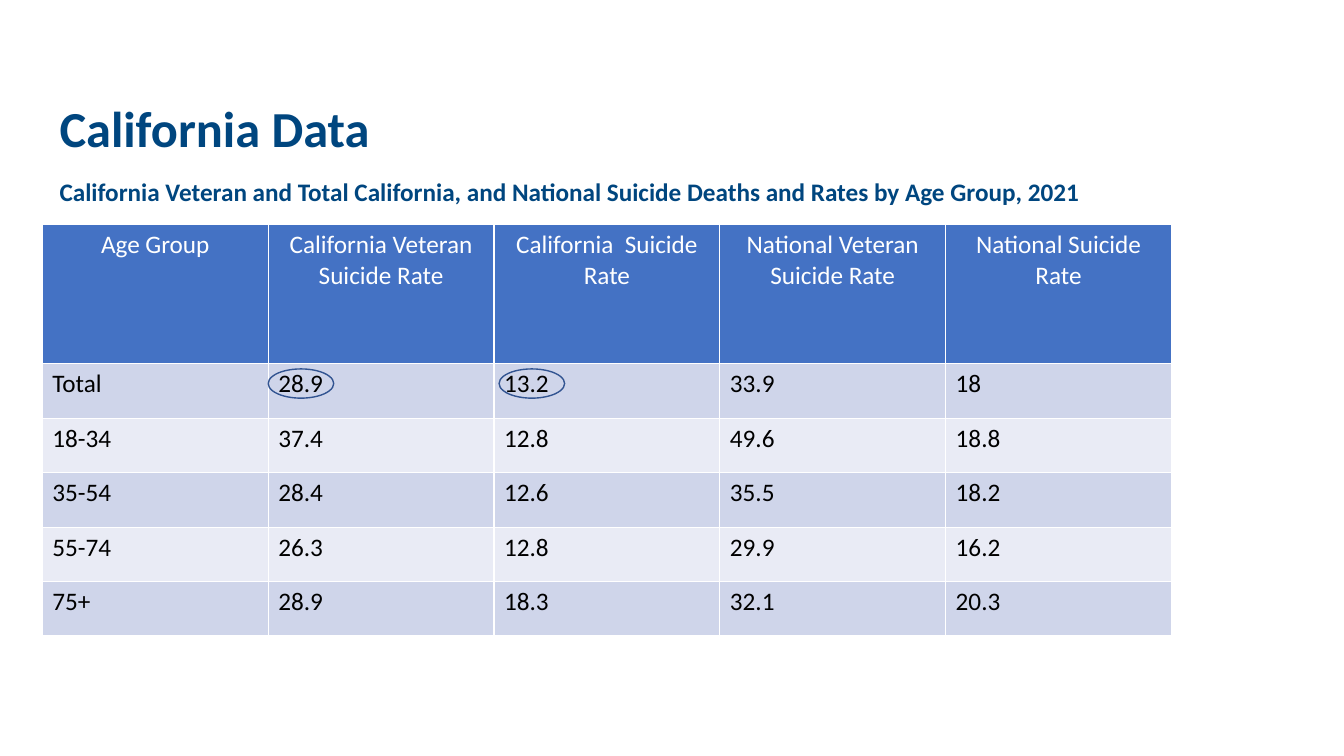
from pptx import Presentation
from pptx import util as u
from pptx.dml.color import RGBColor
from pptx.enum import shapes, text

NAVY = RGBColor(0x00, 0x46, 0x7F)
HEADER_BLUE = RGBColor(0x44, 0x72, 0xC4)
BAND_DARK = RGBColor(0xCF, 0xD5, 0xEA)
BAND_LIGHT = RGBColor(0xE9, 0xEB, 0xF5)
RING_BLUE = RGBColor(0x32, 0x54, 0x91)
WHITE = RGBColor(0xFF, 0xFF, 0xFF)
BLACK = RGBColor(0x00, 0x00, 0x00)

SLIDE_WIDTH, SLIDE_HEIGHT = u.Inches(13.33), u.Inches(7.5)
TABLE_LEFT, TABLE_TOP = u.Inches(0.42), u.Inches(2.23)
COLUMN, ROW, HEADER_ROW = u.Inches(2.24), u.Inches(0.54), u.Inches(1.38)

HEADINGS = [
    ("California Data", 36, 0),
    ("California Veteran and Total California, and National Suicide Deaths "
     "and Rates by Age Group, 2021", 18, 15),
]
RATES = [
    ("Age Group", "California Veteran Suicide Rate", "California  Suicide Rate",
     "National Veteran Suicide Rate", "National Suicide Rate"),
    ("Total", "28.9", "13.2", "33.9", "18"),
    ("18-34", "37.4", "12.8", "49.6", "18.8"),
    ("35-54", "28.4", "12.6", "35.5", "18.2"),
    ("55-74", "26.3", "12.8", "29.9", "16.2"),
    ("75+", "28.9", "18.3", "32.1", "20.3"),
]


def apply(target, values):
    for name, value in values.items():
        setattr(target, name, value)


def style_font(font, size, color, bold):
    apply(font, {"name": "Calibri", "size": u.Pt(size), "bold": bold})
    font.color.rgb = color


def fill_title(box):
    apply(box, {"left": u.Inches(0.49), "top": u.Inches(0.71),
                "width": u.Inches(11.5), "height": u.Inches(1.15)})
    frame = box.text_frame
    apply(frame, {"auto_size": text.MSO_AUTO_SIZE.NONE, "word_wrap": True,
                  "vertical_anchor": text.MSO_ANCHOR.TOP,
                  "margin_top": u.Inches(0.32), "margin_bottom": 0})
    for index, (wording, size, gap) in enumerate(HEADINGS):
        para = frame.add_paragraph() if index else frame.paragraphs[0]
        apply(para, {"alignment": text.PP_ALIGN.LEFT, "line_spacing": 0.9,
                     "space_before": u.Pt(gap)})
        span = para.add_run()
        span.text = wording
        style_font(span.font, size, NAVY, True)


def fill_cell(cell, wording, fill, color, alignment):
    cell.fill.solid()
    cell.fill.fore_color.rgb = fill
    para = cell.text_frame.paragraphs[0]
    para.alignment = alignment
    span = para.add_run()
    span.text = wording
    style_font(span.font, 18, color, False)


def add_rates(page):
    height = HEADER_ROW + ROW * (len(RATES) - 1)
    table = page.shapes.add_table(len(RATES), len(RATES[0]), TABLE_LEFT, TABLE_TOP,
                                  COLUMN * len(RATES[0]), height).table
    for column in table.columns:
        column.width = COLUMN
    for index, values in enumerate(RATES):
        table.rows[index].height = ROW if index else HEADER_ROW
        if index == 0:
            look = HEADER_BLUE, WHITE, text.PP_ALIGN.CENTER
        else:
            look = BAND_DARK if index % 2 else BAND_LIGHT, BLACK, text.PP_ALIGN.LEFT
        for position, wording in enumerate(values):
            fill_cell(table.cell(index, position), wording, *look)


def add_ring(page, column, offset):
    left = TABLE_LEFT + COLUMN * column + u.Inches(offset)
    top = TABLE_TOP + HEADER_ROW + u.Inches(0.05)
    ring = page.shapes.add_shape(shapes.MSO_SHAPE.OVAL, left, top,
                                 u.Inches(0.65), u.Inches(0.29))
    ring.shadow.inherit = False
    ring.fill.background()
    ring.line.color.rgb = RING_BLUE
    ring.line.width = u.Pt(1)


def main():
    deck = Presentation()
    apply(deck, {"slide_width": SLIDE_WIDTH, "slide_height": SLIDE_HEIGHT})
    page = deck.slides.add_slide(deck.slide_layouts[5])
    fill_title(page.shapes.title)
    add_rates(page)
    add_ring(page, 1, 0)
    add_ring(page, 2, 0.05)
    deck.save("out.pptx")


if __name__ == "__main__":
    main()
